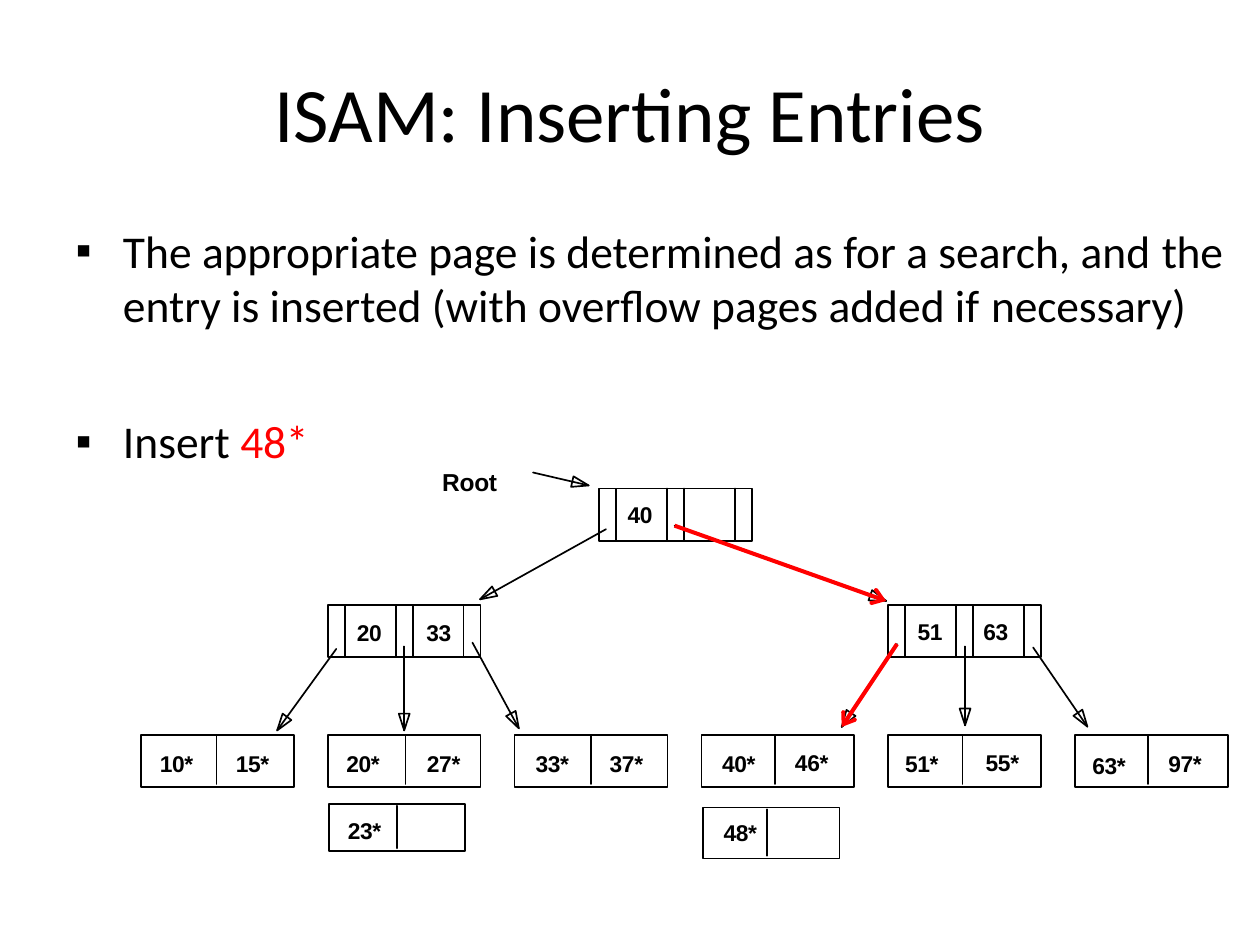
from math import hypot

from lxml.etree import SubElement
from pptx import Presentation
from pptx.dml.color import RGBColor
from pptx.enum.shapes import MSO_SHAPE
from pptx.enum.text import MSO_ANCHOR, MSO_AUTO_SIZE, PP_ALIGN
from pptx.oxml.ns import qn
from pptx.util import Pt

COLORS = {"ink": "000000", "insert": "FF0000"}
LINE_WIDTH = 0.96

# Tree grid
LEAF_LEFT, LEAF_PITCH, LEAF_TOP = 80.6, 106.75, 420
NODE_WIDTH, NODE_HEIGHT = 87.3, 29.8
POINTER_WIDTH = 9.7
KEY_WIDTH = (NODE_WIDTH - 3 * POINTER_WIDTH) / 2
LEAF_DIVIDERS = [123.8, 231.8, 337.7, 442.8, 550.1, 655.9]
ROOT_LEFT, ROOT_TOP, INNER_TOP = 342.4, 279.2, 345.7
RIGHT_LEFT = LEAF_LEFT + 4 * LEAF_PITCH

# Edges of the cells inside an index node
FIRST_KEY = POINTER_WIDTH
SECOND_KEY = 2 * POINTER_WIDTH + KEY_WIDTH
FIRST_END, SECOND_END = FIRST_KEY + KEY_WIDTH, SECOND_KEY + KEY_WIDTH

# Index nodes: left, top, divider offsets
INDEX_NODES = [
    (LEAF_LEFT + LEAF_PITCH, INNER_TOP, [FIRST_KEY, FIRST_END, SECOND_KEY, SECOND_END]),
    (RIGHT_LEFT, INNER_TOP, [FIRST_END, SECOND_END]),
    (ROOT_LEFT, ROOT_TOP, [FIRST_END, SECOND_KEY, SECOND_END]),
]

# Key cells: text, left, top, indent
KEY_CELLS = [
    ("51", RIGHT_LEFT + FIRST_KEY, INNER_TOP, 7.2),
    ("63", RIGHT_LEFT + SECOND_KEY, INNER_TOP, 5.8),
    ("40", ROOT_LEFT + FIRST_KEY, ROOT_TOP, 6.5),
]

# Labels: text, left, top, width, tab stop
LABELS = [
    ("10*\t15*", 91.4, 428.6, 64, 43.4),
    ("20*\t27*", 198, 428.6, 66, 46),
    ("33*\t37*", 306, 428.6, 63, 42.4),
    ("40*", 412.7, 428.6, 22, None),
    ("46*", 454.3, 427.6, 22, None),
    ("51*", 517.2, 428.6, 22, None),
    ("55*", 563.3, 427.6, 22, None),
    ("63*", 624.2, 429.3, 22, None),
    ("97*", 667.7, 428.6, 22, None),
    ("20\t33", 204, 353.7, 56, 39.6),
]

# Overflow pages: left, top, height, divider, entry with its place
OVERFLOW_PAGES = [
    (187.9, 459.4, 26.8, 226.9, ("23*", 198.8, 466.7, 22)),
    (401.8, 461.5, 29, 438.5, ("48*", 413.5, 467.8, 22)),
]

# Arrows: start x, start y, end x, end y
INSERT_PATH = [(385.5, 300.4, 506.4, 343.4), (512.6, 368, 481, 415.4)]
ARROWS = INSERT_PATH + [
    (304.6, 270, 336.4, 277.4),
    (346.3, 302.4, 274.3, 342.5),
    (192.2, 370.8, 158.4, 417.4),
    (231, 369.4, 231, 417.4),
    (270, 367.2, 296.5, 416.2),
    (551.5, 369.4, 551.5, 414.5),
    (590.4, 370, 621.4, 415.2),
]

# One side of the bold arrow's head: distance behind the tip, distance from the axis
BARB = [(7, 5), (8.2, 4.9), (8.7, 4), (8.5, 3.2), (5, 1.15)]


def color(name):
    return RGBColor.from_string(COLORS[name])


def write(paragraph, text, size=13, font="Arial", bold=True, ink="ink",
          align=PP_ALIGN.LEFT, spacing=-0.2):
    run = paragraph.add_run()
    run.text = text
    run.font.size = Pt(size)
    run.font.name = font
    run.font.bold = bold
    run.font.color.rgb = color(ink)
    run.font._element.set("spc", str(round(spacing * 100)))
    paragraph.alignment = align


def prepare_frame(shape, anchor=MSO_ANCHOR.TOP):
    frame = shape.text_frame
    frame.word_wrap = True
    frame.auto_size = MSO_AUTO_SIZE.NONE
    frame.vertical_anchor = anchor
    frame.margin_left = frame.margin_right = frame.margin_top = frame.margin_bottom = 0
    return frame


def add_box(slide, left, top, width, height):
    box = slide.shapes.add_textbox(Pt(left), Pt(top), Pt(width), Pt(height))
    return prepare_frame(box)


def add_label(slide, text, left, top, width, tab=None, size=13):
    frame = add_box(slide, left, top, width, size * 1.25)
    paragraph = frame.paragraphs[0]
    write(paragraph, text, size=size)
    if tab:
        tabs = SubElement(paragraph._p.get_or_add_pPr(), qn("a:tabLst"))
        SubElement(tabs, qn("a:tab"), pos=str(Pt(tab)), algn="l")


def outline(shape):
    shape.shadow.inherit = False
    shape.fill.background()
    shape.line.color.rgb = color("ink")
    shape.line.width = Pt(LINE_WIDTH)


def add_key_cell(slide, text, left, top, indent):
    shape = slide.shapes.add_shape(
        MSO_SHAPE.RECTANGLE, Pt(left), Pt(top), Pt(KEY_WIDTH), Pt(NODE_HEIGHT))
    outline(shape)
    frame = prepare_frame(shape, MSO_ANCHOR.MIDDLE)
    frame.margin_left = Pt(indent)
    write(frame.paragraphs[0], text)


def add_drawing(slide, contours):
    """Join contours, each returning to its start, into one freeform."""
    contours = [[(Pt(x), Pt(y)) for x, y in contour] for contour in contours]
    builder = slide.shapes.build_freeform(*contours[0][0], scale=1.0)
    for index, contour in enumerate(contours):
        if index:
            builder.move_to(*contour[0])
        builder.add_line_segments(contour[1:] + contour[:1], close=False)
    shape = builder.convert_to_shape()
    outline(shape)
    return shape


def rectangle(left, top, width, height):
    right, bottom = left + width, top + height
    return [(left, bottom), (left, top), (right, top), (right, bottom)]


def vertical(x, top, bottom):
    return [(x, top), (x, bottom)]


def along_arrow(arrow, offsets):
    """Turn distances behind the tip and beside the axis into points."""
    x1, y1, x2, y2 = arrow
    distance = hypot(x2 - x1, y2 - y1)
    ux, uy = (x2 - x1) / distance, (y2 - y1) / distance
    return [(x2 - back * ux - side * uy, y2 - back * uy + side * ux)
            for back, side in offsets]


def bold_arrow(arrow):
    x1, y1, x2, y2 = arrow
    half = BARB + [(hypot(x2 - x1, y2 - y1), BARB[-1][1])]
    mirrored = [(back, -side) for back, side in reversed(half)]
    return along_arrow(arrow, [(0, 0)] + half + mirrored)


def add_tree(slide):
    contours = []
    for index, divider in enumerate(LEAF_DIVIDERS):
        left = LEAF_LEFT + index * LEAF_PITCH
        contours.append(rectangle(left, LEAF_TOP, NODE_WIDTH, NODE_HEIGHT))
        contours.append(vertical(divider, LEAF_TOP + 0.5, LEAF_TOP + 28))
    for left, top, offsets in INDEX_NODES:
        contours.append(rectangle(left, top, NODE_WIDTH, NODE_HEIGHT))
        contours += [vertical(left + offset, top, top + NODE_HEIGHT) for offset in offsets]
    for arrow in ARROWS:
        contours.append([arrow[:2], arrow[2:]])
        contours.append(along_arrow(arrow, [(9.6, 3.1), (0, 0), (9.6, -3.1)]))
    add_drawing(slide, contours)


def add_title(slide, text):
    title = slide.shapes.title
    title.left, title.top, title.width, title.height = Pt(52.6), Pt(26.6), Pt(615), Pt(65)
    frame = prepare_frame(title)
    frame.margin_top = Pt(11)
    write(frame.paragraphs[0], text, size=44, font="Calibri", bold=False,
          align=PP_ALIGN.CENTER, spacing=0)


def add_bullets(slide, bullets):
    frame = add_box(slide, 42.3, 127.3, 662, 142)
    for index, (runs, space) in enumerate(bullets):
        paragraph = frame.add_paragraph() if index else frame.paragraphs[0]
        paragraph.space_before = Pt(space)
        for text, ink, spacing in runs:
            write(paragraph, text, size=26, font="Calibri", bold=False,
                  ink=ink, spacing=spacing)
        properties = paragraph._p.get_or_add_pPr()
        properties.set("marL", str(Pt(28)))
        properties.set("indent", str(-Pt(27)))
        SubElement(properties, qn("a:buFont"), typeface="Arial")
        SubElement(properties, qn("a:buChar"), char="▪")


def main():
    presentation = Presentation()
    presentation.slide_width, presentation.slide_height = Pt(720), Pt(540)
    slide = presentation.slides.add_slide(presentation.slide_layouts[5])

    # Heading and bullets
    add_title(slide, "ISAM: Inserting Entries")
    add_bullets(slide, [
        ([("The ", "ink", 0), ("appropriate ", "ink", -0.1),
          ("page is determined as for a search, and ", "ink", 0), ("the ", "ink", -0.2),
          ("entry is inserted (with overflow pages added if ", "ink", 0),
          ("necessary)", "ink", -0.1)], 1.1),
        ([("Insert ", "ink", 0), ("48*", "insert", -0.2)], 46.5),
    ])

    # Tree with its entries and keys
    add_tree(slide)
    for label in LABELS:
        add_label(slide, *label)
    for cell in KEY_CELLS:
        add_key_cell(slide, *cell)
    add_label(slide, "Root", 252.7, 266.6, 34, size=14)

    # Path followed by the insertion
    path = add_drawing(slide, [bold_arrow(arrow) for arrow in INSERT_PATH])
    path.fill.solid()
    path.fill.fore_color.rgb = color("insert")
    path.line.fill.background()

    # Overflow pages
    for left, top, height, divider, entry in OVERFLOW_PAGES:
        add_drawing(slide, [rectangle(left, top, 78, height),
                            vertical(divider, top + 1, top + height - 1.5)])
        add_label(slide, *entry)

    presentation.save("out.pptx")


if __name__ == "__main__":
    main()
